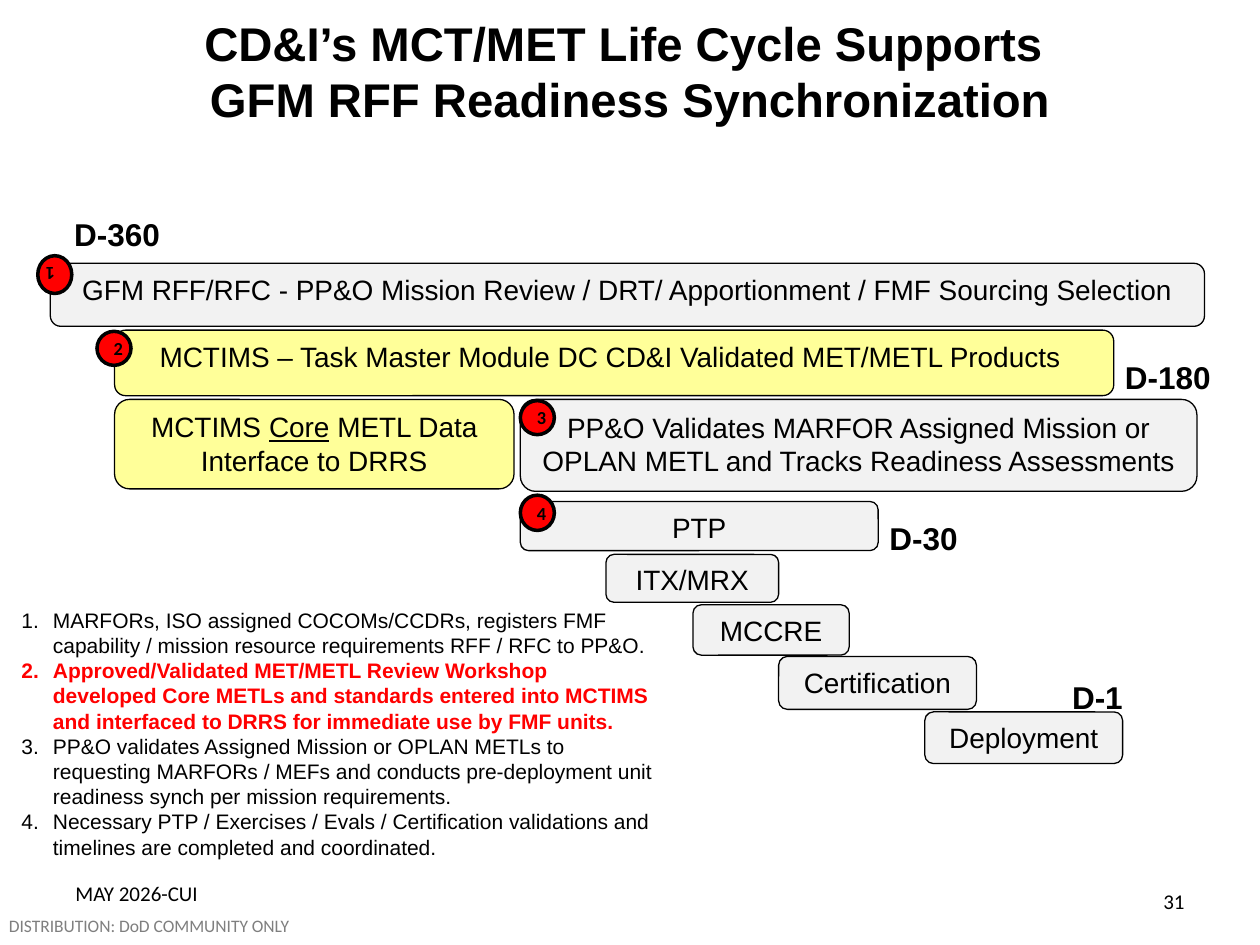
from lxml import etree
from pptx import Presentation
from pptx.dml.color import RGBColor
from pptx.enum.shapes import MSO_SHAPE
from pptx.enum.text import MSO_ANCHOR, MSO_AUTO_SIZE, PP_ALIGN
from pptx.oxml.ns import qn
from pptx.util import Inches, Pt

ROUND, DOT = MSO_SHAPE.ROUNDED_RECTANGLE, MSO_SHAPE.FLOWCHART_CONNECTOR
TOP, MID = MSO_ANCHOR.TOP, MSO_ANCHOR.MIDDLE
LEFT, MIDST, RIGHT = PP_ALIGN.LEFT, PP_ALIGN.CENTER, PP_ALIGN.RIGHT
NOFIT = MSO_AUTO_SIZE.NONE

COLORS = {"ink": "000000", "gray": "F2F2F2", "gold": "FFFF99",
          "red": "FF0000", "dim": "7F7F7F"}

TITLE = ["CD&I’s MCT/MET Life Cycle Supports ",
         "GFM RFF Readiness Synchronization"]
BARS = [
    (0.1, 0.43, 9.16, 0.5, "gray",
     ["GFM RFF/RFC - PP&O Mission Review / DRT/ Apportionment / FMF Sourcing Selection"]),
    (0.61, 0.96, 7.93, 0.52, "gold",
     ["MCTIMS – Task Master Module DC CD&I Validated MET/METL Products "]),
    (0.61, 1.51, 3.17, 0.71, "gold",
     ["MCTIMS ", "Core", " METL Data Interface to DRRS"]),
    (3.83, 1.51, 5.37, 0.73, "gray",
     ["PP&O Validates MARFOR Assigned Mission or OPLAN METL and Tracks Readiness Assessments"]),
    (3.83, 2.32, 2.84, 0.39, "gray", ["PTP"]),
    (4.51, 2.74, 1.37, 0.38, "gray", ["ITX/MRX"]),
    (5.2, 3.14, 1.24, 0.4, "gray", ["MCCRE"]),
    (5.88, 3.55, 1.57, 0.42, "gray", ["Certification"]),
    (7.04, 3.99, 1.57, 0.41, "gray", ["Deployment"]),
]
DAYS = [("D-360", 0.19, 0, 0.89), ("D-180", 8.53, 1.13, 0.89),
        ("D-30", 6.66, 2.41, 0.75), ("D-1", 8.11, 3.67, 0.61)]
DOTS = [(0, 0.37, 0.3), (0.47, 0.97, 0.27), (3.83, 1.52, 0.27), (3.83, 2.27, 0.28)]
NOTES = [
    "MARFORs, ISO assigned COCOMs/CCDRs, registers FMF capability / mission resource requirements RFF / RFC to PP&O.",
    "Approved/Validated MET/METL Review Workshop developed Core METLs and standards entered into MCTIMS and interfaced to DRRS for immediate use by FMF units.",
    "PP&O validates Assigned Mission or OPLAN METLs to requesting MARFORs / MEFs and conducts pre-deployment unit readiness synch per mission requirements.",
    "Necessary PTP / Exercises / Evals / Certification validations and timelines are completed and coordinated.",
]
HOT = 1


def rgb(name):
    return RGBColor.from_string(COLORS[name])


def style(para, size, face="Arial", bold=False, color="ink", align=LEFT):
    para.alignment = align
    font = para.font
    font.size, font.name, font.bold = Pt(size), face, bold
    font.color.rgb = rgb(color)


def place(shape, box):
    shape.left, shape.top, shape.width, shape.height = [Inches(n) for n in box]


def block(slide, kind, box, fill, width):
    shape = slide.shapes.add_shape(kind, *[Inches(n) for n in box])
    shape.shadow.inherit = False
    shape.fill.solid()
    shape.fill.fore_color.rgb = rgb(fill)
    shape.line.color.rgb = rgb("ink")
    shape.line.width = Pt(width)
    return shape


def label(slide, box, text, size, wrap=True, anchor=TOP, pad=None, **look):
    frame = slide.shapes.add_textbox(*[Inches(n) for n in box]).text_frame
    frame.word_wrap = wrap
    frame.vertical_anchor = anchor
    if pad is not None:
        frame.margin_left = frame.margin_right = Inches(pad)
        frame.margin_top = frame.margin_bottom = Inches(pad)
    frame.text = text
    style(frame.paragraphs[0], size, **look)


def head(slide, box):
    title = slide.shapes.title
    place(title, box)
    frame = title.text_frame
    frame.auto_size = NOFIT
    frame.vertical_anchor = MID
    frame.text = "\n".join(TITLE)
    for para in frame.paragraphs:
        style(para, 27, bold=True, align=MIDST)


def chain(slide, box):
    x, y = box[:2]
    for dx, dy, wide, high, fill, parts in BARS:
        bar = block(slide, ROUND, (x + dx, y + dy, wide, high), fill, 0.75)
        bar.text_frame.vertical_anchor = TOP
        para = bar.text_frame.paragraphs[0]
        style(para, 16, align=MIDST)
        for spot, part in enumerate(parts):
            run = para.add_run()
            run.text = part
            if spot == 1:
                run.font.underline = True
    for day, dx, dy, wide in DAYS:
        label(slide, (x + dx, y + dy, wide, 0.4), day, 18, wrap=False, bold=True)
    for step, (dx, dy, high) in enumerate(DOTS, 1):
        dot = block(slide, DOT, (x + dx, y + dy, 0.27, high), "red", 2)
        dot.text_frame.text = str(step)
        style(dot.text_frame.paragraphs[0], 10.5, "Calibri", True, align=MIDST)
        if step == 1:
            dot.element.spPr.find(qn("a:xfrm")).set("flipV", "1")


def notes(slide, box):
    body = slide.placeholders[1]
    place(body, box)
    frame = body.text_frame
    frame.auto_size = NOFIT
    frame.text = "\n".join(NOTES)
    for spot, para in enumerate(frame.paragraphs):
        props = para._p.get_or_add_pPr()
        props.set("marL", str(Inches(0.25)))
        props.set("indent", str(-Inches(0.25)))
        etree.SubElement(props, qn("a:buFont"), typeface="+mj-lt")
        etree.SubElement(props, qn("a:buAutoNum"), type="arabicPeriod")
        para.space_before = Pt(0)
        hot = spot == HOT
        style(para, 12, bold=hot, color="red" if hot else "ink")


def foot(slide, box):
    x, y, wide, high = box
    label(slide, (x, y, 2.03, 0.4), "MAY 2026-CUI", 12, anchor=MID,
          face="Calibri", align=MIDST)
    label(slide, (x + wide - 2.33, y + 0.06, 2.33, 0.4), "31", 12, anchor=MID,
          face="Calibri", align=RIGHT)
    label(slide, (x, y + high - 0.17, 2.28, 0.17), "DISTRIBUTION: DoD COMMUNITY ONLY",
          10, wrap=False, pad=0, face="Calibri", color="dim")


def main():
    deck = Presentation()
    deck.slide_width, deck.slide_height = Inches(10), Inches(7.5)
    slide = deck.slides.add_slide(deck.slide_layouts[1])
    head(slide, (0, 0, 10, 1.12))
    chain(slide, (0.3, 1.66, 9.42, 4.4))
    notes(slide, (0.07, 4.77, 5.24, 2.12))
    foot(slide, (0.07, 6.89, 9.43, 0.54))
    deck.save("out.pptx")


if __name__ == "__main__":
    main()
